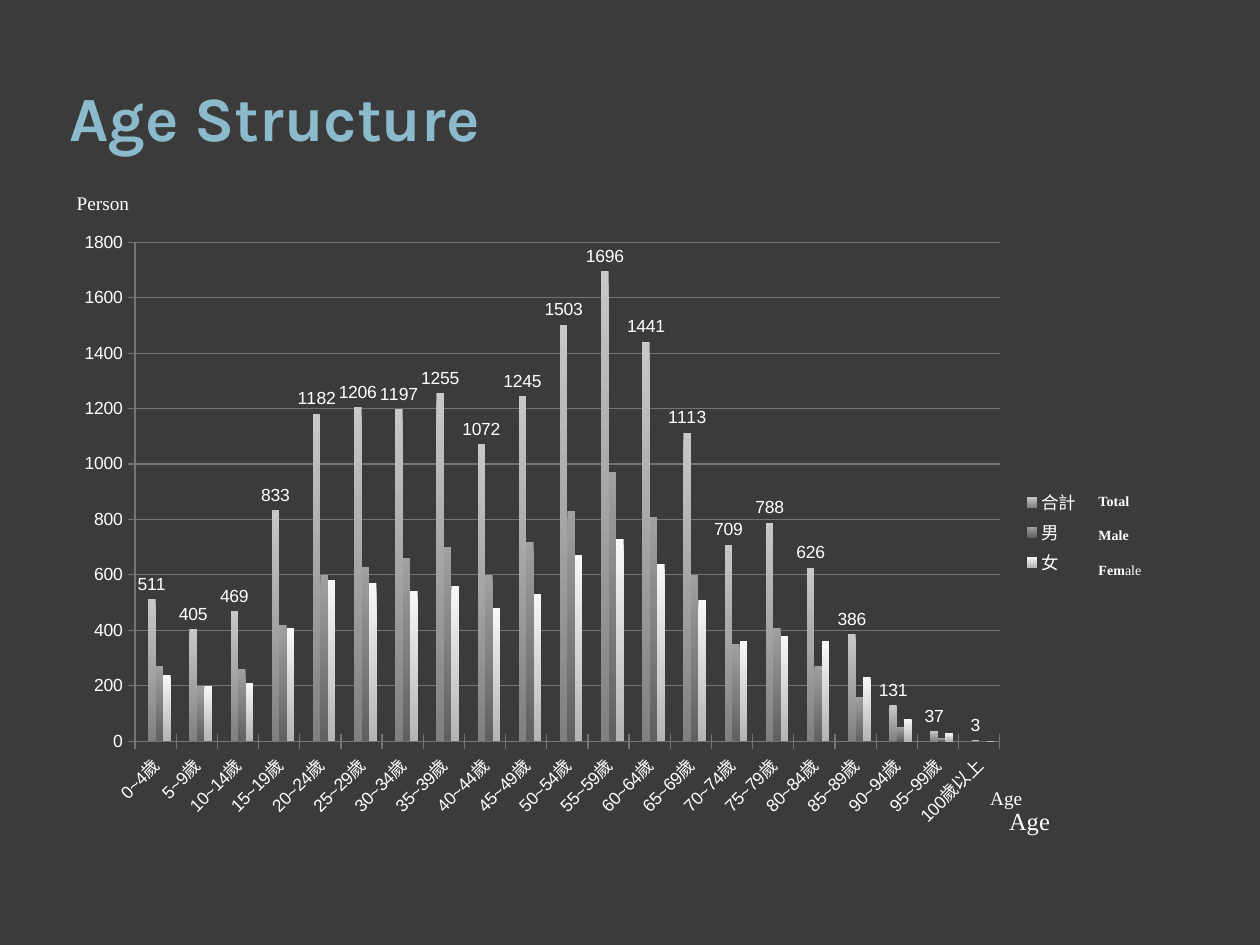
from lxml import etree
from pptx import Presentation
from pptx.chart.data import CategoryChartData
from pptx.dml.color import RGBColor
from pptx.enum.chart import XL_CHART_TYPE, XL_LABEL_POSITION, XL_LEGEND_POSITION, XL_TICK_MARK
from pptx.enum.text import MSO_ANCHOR, PP_ALIGN
from pptx.oxml import parse_xml
from pptx.oxml.ns import nsdecls, qn
from pptx.util import Inches, Pt

CLUSTERED = XL_CHART_TYPE.COLUMN_CLUSTERED
OUTSIDE_END = XL_LABEL_POSITION.OUTSIDE_END
LEGEND_RIGHT = XL_LEGEND_POSITION.RIGHT
CROSS = XL_TICK_MARK.CROSS
MIDDLE = MSO_ANCHOR.MIDDLE
LEFT = PP_ALIGN.LEFT

BACKGROUND, WHITE, TITLE_BLUE, GRID = "3B3B3B", "FFFFFF", "8ABACB", "747474"


def color(hex_string):
    return RGBColor.from_string(hex_string)


def style_font(font, hex_string, **values):
    font.color.rgb = color(hex_string)
    for name, value in values.items():
        setattr(font, name, value)


presentation = Presentation()
presentation.slide_width, presentation.slide_height = Inches(10), Inches(7.5)
slide = presentation.slides.add_slide(presentation.slide_layouts[5])
slide.background.fill.solid()
slide.background.fill.fore_color.rgb = color(BACKGROUND)

# Title
title = slide.shapes.title
title.left, title.top, title.width, title.height = map(Inches, (0.5, 0.3, 8.17, 1.25))
frame = title.text_frame
frame.text = "Age Structure"
frame.vertical_anchor = MIDDLE
for side in ("left", "top", "right", "bottom"):
    setattr(frame, f"margin_{side}", Inches(0.05))
frame.paragraphs[0].alignment = LEFT
style_font(frame.paragraphs[0].runs[0].font, TITLE_BLUE, name="Karla", size=Pt(36), bold=True)

# Chart data: the first series is an empty slot before the three visible columns
categories = [f"{age}~{age + 4}歲" for age in range(0, 100, 5)] + ["100歲以上"]
series_values = {
    "Series 1": [0] * 20 + [None],
    "合計": [511, 405, 469, 833, 1182, 1206, 1197, 1255, 1072, 1245, 1503,
           1696, 1441, 1113, 709, 788, 626, 386, 131, 37, 3],
    "男": [270, 200, 260, 420, 600, 630, 660, 700, 600, 720, 830,
          970, 810, 600, 350, 410, 270, 160, 50, 10, 0],
    "女": [240, 200, 210, 410, 580, 570, 540, 560, 480, 530, 670,
          730, 640, 510, 360, 380, 360, 230, 80, 30, 0],
}
gradients = [("6EA0B0", "6EA0B0"), ("C8C8C8", "808080"), ("A0A0A0", "606060"), ("F8F8F8", "B4B4B4")]
chart_data = CategoryChartData()
chart_data.categories = categories
for name, values in series_values.items():
    chart_data.add_series(name, values)
chart = slide.shapes.add_chart(
    CLUSTERED, Inches(0.5), Inches(1.75), Inches(8.17), Inches(4.95), chart_data
).chart
chart.has_title = False
style_font(chart.font, WHITE, name="Arial", size=Pt(10))

plot = chart.plots[0]
plot.vary_by_categories = False
plot.gap_width, plot.overlap = 150, 0
for series, stops in zip(plot.series, gradients):
    fill = series.format.fill
    fill.gradient()
    fill.gradient_angle = 270
    for stop, hex_string in zip(fill.gradient_stops, stops):
        stop.color.rgb = color(hex_string)
labels = plot.series[1].data_labels
labels.show_value = True
labels.position = OUTSIDE_END
style_font(labels.font, WHITE, name="Arial", size=Pt(10))

for axis in (chart.category_axis, chart.value_axis):
    axis.major_tick_mark = CROSS
    axis.format.line.color.rgb = color(GRID)
    style_font(axis.tick_labels.font, WHITE, name="Arial", size=Pt(10))
chart.category_axis._element.find(qn("c:txPr")).find(qn("a:bodyPr")).set("rot", "-2700000")
value_axis = chart.value_axis
value_axis.minimum_scale, value_axis.maximum_scale, value_axis.major_unit = 0, 1800, 200
value_axis.major_gridlines.format.line.color.rgb = color(GRID)

chart.has_legend = True
chart.legend.position = LEGEND_RIGHT
chart.legend.include_in_layout = False
hidden_entry = parse_xml(
    f'<c:legendEntry {nsdecls("c")}><c:idx val="0"/><c:delete val="1"/></c:legendEntry>'
)
chart.legend._element.find(qn("c:legendPos")).addnext(hidden_entry)

# Fixed inner plot area, as fractions of the chart
plot_area = chart._chartSpace.chart.plotArea
for old_layout in plot_area.findall(qn("c:layout")):
    plot_area.remove(old_layout)
layout = etree.Element(qn("c:layout"))
manual = etree.SubElement(layout, qn("c:manualLayout"))
for tag, value in (("layoutTarget", "inner"), ("xMode", "edge"), ("yMode", "edge"),
                   ("x", "0.07"), ("y", "0.035"), ("w", "0.84"), ("h", "0.8")):
    etree.SubElement(manual, qn(f"c:{tag}")).set("val", value)
plot_area.insert(0, layout)

# Axis names and legend translations: box, size, paragraphs of (text, bold) runs
text_boxes = [
    ((8.62, 3.86, 0.87, 0.77), 8,
     [[("Total", True)], [("Male", True)], [("Fem", True), ("ale", False)]]),
    ((0.51, 1.47, 0.63, 0.28), 11, [[("Person", False)]]),
    ((7.76, 6.19, 0.63, 0.29), 11, [[("Age", False)]]),
    ((7.91, 6.35, 1.02, 0.34), 14, [[("Age", False)]]),
]
for box, size, paragraphs in text_boxes:
    frame = slide.shapes.add_textbox(*map(Inches, box)).text_frame
    frame.word_wrap = True
    for index, runs in enumerate(paragraphs):
        paragraph = frame.add_paragraph() if index else frame.paragraphs[0]
        paragraph.space_before = Pt(10 if index else 0)
        for text, bold in runs:
            run = paragraph.add_run()
            run.text = text
            style_font(run.font, WHITE, name="Times New Roman", size=Pt(size), bold=bold)

presentation.save("out.pptx")
